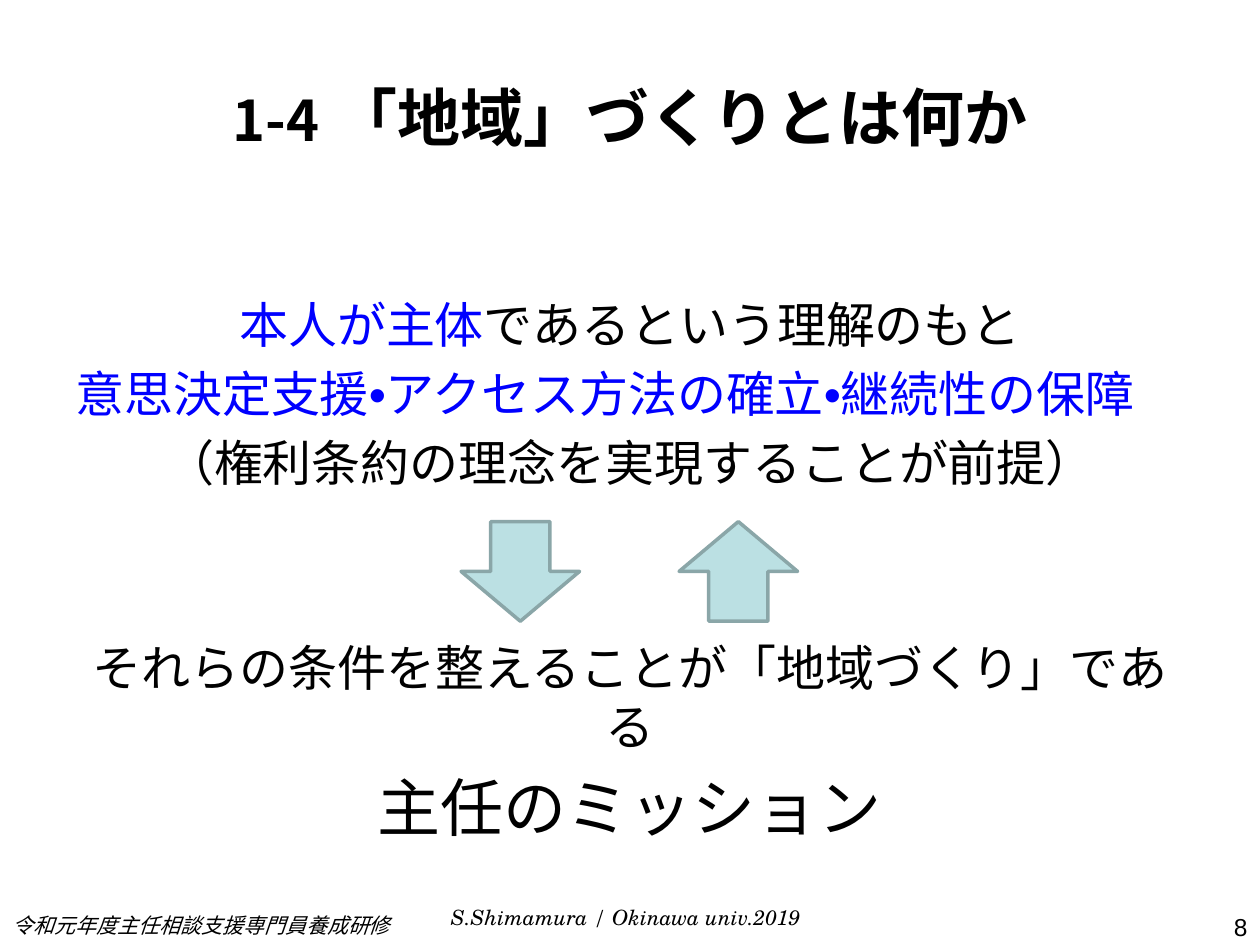
from pptx import Presentation
from pptx.dml.color import RGBColor
from pptx.enum.shapes import MSO_SHAPE
from pptx.enum.text import MSO_ANCHOR, PP_ALIGN
from pptx.oxml.ns import qn
from pptx.util import Inches, Pt
from lxml import etree

DOWN_ARROW = MSO_SHAPE.DOWN_ARROW
TOP, MIDDLE = MSO_ANCHOR.TOP, MSO_ANCHOR.MIDDLE
LEFT, CENTER, RIGHT = PP_ALIGN.LEFT, PP_ALIGN.CENTER, PP_ALIGN.RIGHT
COLORS = {"ink": "000000", "key": "0000FF", "arrow": "BBE0E3", "edge": "8AA6A8"}
SANS, JAPANESE, SERIF = "Arial", "Noto Sans CJK JP", "TeX Gyre Schola"

deck = Presentation()
deck.slide_width, deck.slide_height = Inches(10), Inches(7.5)
slide = deck.slides.add_slide(deck.slide_layouts[6])


def add_frame(left, top, width, height, anchor=TOP):
    frame = slide.shapes.add_textbox(*map(Inches, (left, top, width, height))).text_frame
    frame.word_wrap = True
    frame.vertical_anchor = anchor
    return frame


def add_run(paragraph, text, color="ink", face=SANS, **format_values):
    """Add a run whose Latin and East Asian text share one typeface."""
    run = paragraph.add_run()
    run.text = text
    run.font.name = face
    run.font.color.rgb = RGBColor.from_string(COLORS[color])
    for attribute, value in format_values.items():
        setattr(run.font, attribute, value)
    east_asian = etree.Element(qn("a:ea"), typeface=face)
    run.font._element.find(qn("a:latin")).addnext(east_asian)


# Title
heading = add_frame(0.5, 0.3, 9, 1.25, MIDDLE).paragraphs[0]
heading.alignment = CENTER
for text, size in (("1-4", 32), (" 「地域」づくりとは何か", 36)):
    add_run(heading, text, face=JAPANESE, size=Pt(size), bold=True)

# Body: alignment, space before, size, runs; the wide gap leaves room for the arrows
body = add_frame(0.5, 1.75, 9, 4.95)
body.margin_top = Inches(0.59)
statements = [
    (CENTER, 0, 28, [("本人が主体", "key"), ("であるという理解のもと", "ink")]),
    (LEFT, 5.6, 28, [("意思決定支援•アクセス方法の確立•継続性の保障", "key")]),
    (CENTER, 5.6, 28, [("（権利条約の理念を実現することが前提）", "ink")]),
    (CENTER, 84, 28, [("それらの条件を整えることが「地域づくり」である", "ink")]),
    (CENTER, 7.2, 36, [("主任のミッション", "ink")]),
]
for index, (alignment, gap, size, parts) in enumerate(statements):
    statement = body.add_paragraph() if index else body.paragraphs[0]
    statement.alignment = alignment
    statement.space_before = Pt(gap)
    for text, color in parts:
        add_run(statement, text, color, size=Pt(size))

# Arrows between premise and conclusion
for left, rotation in ((3.66, 0), (5.39, 180)):
    arrow = slide.shapes.add_shape(DOWN_ARROW, *map(Inches, (left, 4.14, 0.94, 0.79)))
    arrow.rotation = rotation
    arrow.shadow.inherit = False
    arrow.fill.solid()
    arrow.fill.fore_color.rgb = RGBColor.from_string(COLORS["arrow"])
    arrow.line.color.rgb = RGBColor.from_string(COLORS["edge"])
    arrow.line.width = Pt(2)

# Footer
footers = [
    ((3.48, 7.13, 3.03, 0.3), LEFT, "S.Shimamura / Okinawa univ.2019", SERIF, 12, True),
    ((0, 7.19, 3.39, 0.31), LEFT, "令和元年度主任相談支援専門員養成研修", JAPANESE, 12, True),
    ((7.67, 7.19, 2.33, 0.31), RIGHT, "8", SANS, 14, False),
]
for box, alignment, text, face, size, italic in footers:
    footer = add_frame(*box).paragraphs[0]
    footer.alignment = alignment
    add_run(footer, text, face=face, size=Pt(size), italic=italic)

deck.save("out.pptx")
